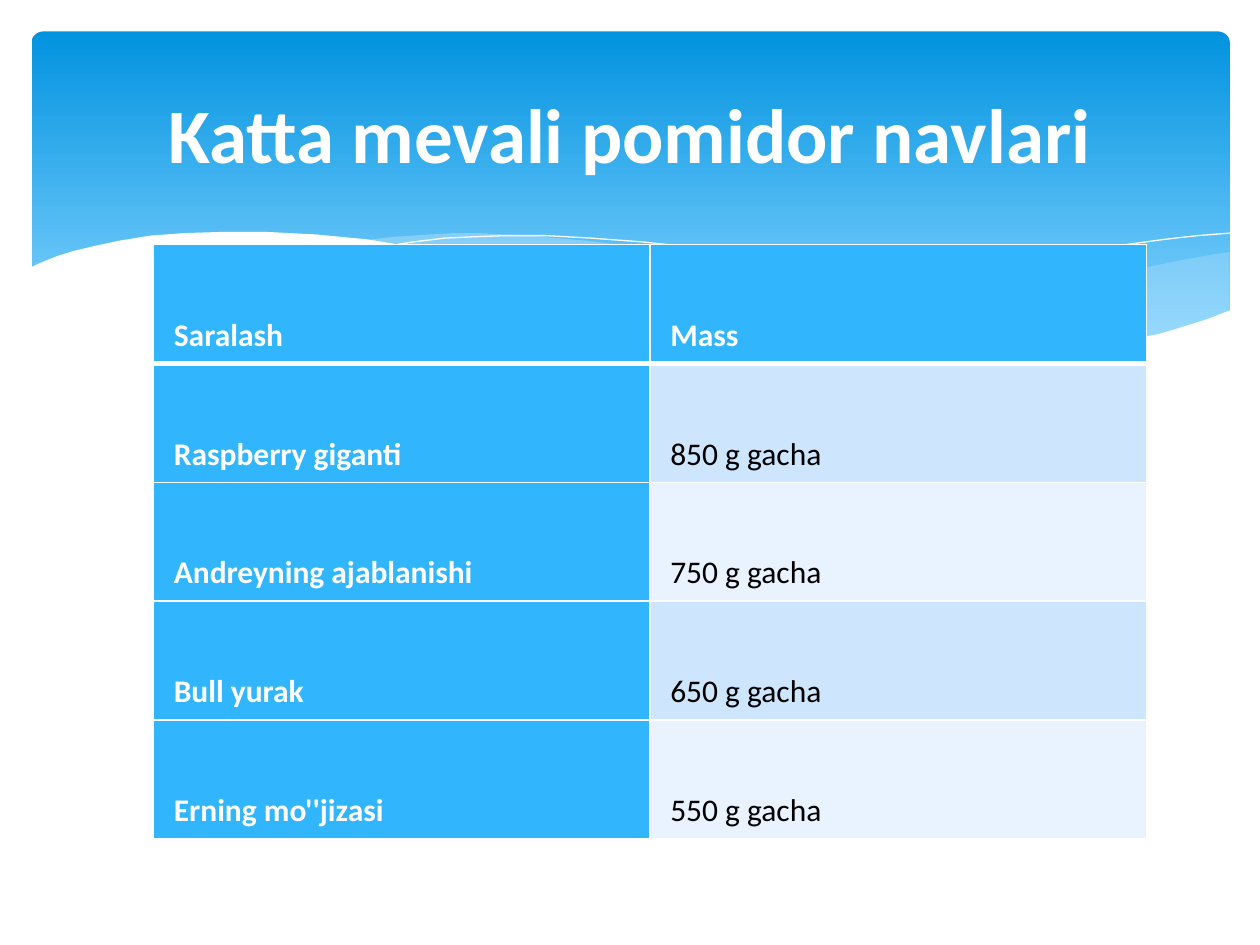
from lxml import etree
from pptx import Presentation
from pptx import util as u
from pptx.dml.color import RGBColor
from pptx.enum import shapes, text
from pptx.oxml.ns import qn

PX = 9144  # 100 px to the inch
FONT = "Calibri"
WHITE, BLACK, ACCENT = "FFFFFF", "000000", "31B6FD"
BANDS = ["CEE5FE", "E8F3FF"]
ROWS = [
    ("Saralash", "Mass"),
    ("Raspberry giganti", "850 g gacha"),
    ("Andreyning ajablanishi", "750 g gacha"),
    ("Bull yurak", "650 g gacha"),
    ("Erning mo''jizasi", "550 g gacha"),
]

# Wave outlines, relative to the top left corner of the banner
RIGHT_WAVE = [
    (951, 175), (937, 177), (910, 182), (881, 188), (851, 195), (836, 198), (807, 205),
    (754, 217), (704, 228), (658, 237), (636, 240), (666, 244), (694, 247), (720, 250),
    (744, 252), (767, 252), (789, 253), (810, 252), (829, 251), (847, 249), (864, 247),
    (880, 244), (896, 240), (910, 237), (924, 232), (938, 227), (951, 222)]
MIDDLE_WAVE = [
    (868, 248), (841, 244), (812, 240), (782, 235), (750, 229), (716, 222), (681, 215),
    (643, 206), (604, 197), (573, 189), (544, 183), (516, 178), (489, 173), (464, 169),
    (440, 166), (417, 164), (395, 162), (374, 161), (355, 160), (336, 160), (319, 161),
    (288, 163), (261, 166), (298, 171), (337, 178), (379, 186), (424, 197), (466, 207),
    (505, 215), (541, 223), (576, 230), (609, 236), (640, 241), (670, 245), (697, 249),
    (723, 251), (748, 252), (771, 253), (803, 253), (842, 251)]
LEFT_CREST = [
    (284, 170), (303, 167), (328, 164), (349, 163), (376, 162), (408, 162), (444, 164),
    (485, 167), (531, 172), (557, 175), (583, 179), (611, 183), (640, 188), (670, 194),
    (702, 201), (735, 208), (770, 216), (806, 226), (844, 236), (882, 247)]
RIGHT_CREST = [
    (588, 232), (599, 229), (628, 221), (670, 210), (723, 198), (781, 185), (841, 174),
    (870, 169), (899, 165), (926, 162), (951, 160)]
PAGE_EDGE = [
    (952, 221), (934, 228), (915, 234), (895, 240), (874, 244), (850, 248), (825, 250),
    (798, 252), (768, 251), (736, 250), (701, 247), (663, 243), (623, 237), (578, 229),
    (530, 220), (478, 208), (422, 195), (393, 188), (366, 182), (340, 177), (315, 172),
    (291, 169), (267, 165), (246, 163), (225, 161), (205, 160), (186, 159), (152, 159),
    (121, 160), (94, 162), (70, 166), (51, 170), (34, 174), (21, 178), (11, 182),
    (4, 185), (-2, 188), (-2, 304), (952, 304)]


def px(*values):
    return [u.Emu(v * PX) for v in values]


def rgb(color):
    return RGBColor.from_string(color)


def add_run(p, content, *, size, color, bold=False):
    r = p.add_run()
    r.text = content
    r.font.name, r.font.size, r.font.bold = FONT, u.Pt(size), bold
    r.font.color.rgb = rgb(color)


def add_wave(s, origin, points, fill=None, alpha=100):
    """Draw a closed filled wave, or an open white hairline without a fill."""
    left, top = origin
    path = [(left + x, top + y) for x, y in points]
    builder = s.shapes.build_freeform(*path[0], scale=PX)
    builder.add_line_segments(path[1:], close=fill is not None)
    sp = builder.convert_to_shape()
    sp.shadow.inherit = False
    if fill is None:
        sp.fill.background()
        sp.line.color.rgb = rgb(WHITE)
        sp.line.width = 0
        return
    sp.fill.solid()
    sp.fill.fore_color.rgb = rgb(fill)
    sp.line.fill.background()
    if alpha < 100:
        clr = sp._element.spPr.find(qn("a:solidFill"))[0]
        etree.SubElement(clr, qn("a:alpha"), val=str(alpha * 1000))


def add_banner(s, left, top, width, height):
    sp = s.shapes.add_shape(shapes.MSO_SHAPE.ROUNDED_RECTANGLE, *px(left, top, width, height))
    sp.adjustments[0] = 0.034
    sp.shadow.inherit = False
    sp.line.fill.background()
    sp.fill.gradient()
    sp.fill.gradient_angle = 270
    for stop, position, color in zip(sp.fill.gradient_stops, (0, 0.9), ("0293E0", "83D3FE")):
        stop.position = position
        stop.color.rgb = rgb(color)

    origin = left, top
    add_wave(s, origin, RIGHT_WAVE, "C6E7FC", 29)
    add_wave(s, origin, MIDDLE_WAVE, "C6E7FC", 40)
    add_wave(s, origin, LEFT_CREST)
    add_wave(s, origin, RIGHT_CREST)
    add_wave(s, origin, PAGE_EDGE, WHITE)


def set_borders(cell, **widths):
    """Give the cell white borders; widths are points by side, L, R, T and B."""
    tc_pr = cell._tc.get_or_add_tcPr()
    for i, side in enumerate("LRTB"):
        ln = etree.Element(qn(f"a:ln{side}"), w=str(u.Pt(widths.get(side, 1))))
        fill = etree.SubElement(ln, qn("a:solidFill"))
        etree.SubElement(fill, qn("a:srgbClr"), val=WHITE)
        tc_pr.insert(i, ln)


def add_variety_table(s, left, top, width, height):
    n_rows, n_cols = len(ROWS), len(ROWS[0])
    table = s.shapes.add_table(n_rows, n_cols, *px(left, top, width, height)).table
    for i, row in enumerate(ROWS):
        for j, content in enumerate(row):
            cell = table.cell(i, j)
            strong = i == 0 or j == 0
            cell.fill.solid()
            cell.fill.fore_color.rgb = rgb(ACCENT if strong else BANDS[(i - 1) % 2])
            set_borders(cell, T=3 if i == 1 else 1, B=3 if i == 0 else 1)
            cell.margin_left = cell.margin_right = px(16)[0]
            cell.margin_top = cell.margin_bottom = px(7)[0]
            cell.vertical_anchor = text.MSO_ANCHOR.BOTTOM
            p = cell.text_frame.paragraphs[0]
            p.line_spacing = 1.15
            add_run(p, content, size=18, color=WHITE if strong else BLACK, bold=strong)


def add_title(s, left, top, width, height):
    tf = s.shapes.add_textbox(*px(left, top, width, height)).text_frame
    tf.word_wrap = True
    tf.vertical_anchor = text.MSO_ANCHOR.MIDDLE
    p = tf.paragraphs[0]
    p.alignment = text.PP_ALIGN.CENTER
    add_run(p, "Katta mevali pomidor navlari", size=44, color=WHITE, bold=True)


def main():
    prs = Presentation()
    prs.slide_width, prs.slide_height = px(1000, 750)
    s = prs.slides.add_slide(prs.slide_layouts[6])
    add_banner(s, 25, 25, 951, 270)
    add_variety_table(s, 122, 194, 788, 472)
    add_title(s, 50, 37, 900, 137)
    prs.save("out.pptx")


if __name__ == "__main__":
    main()
